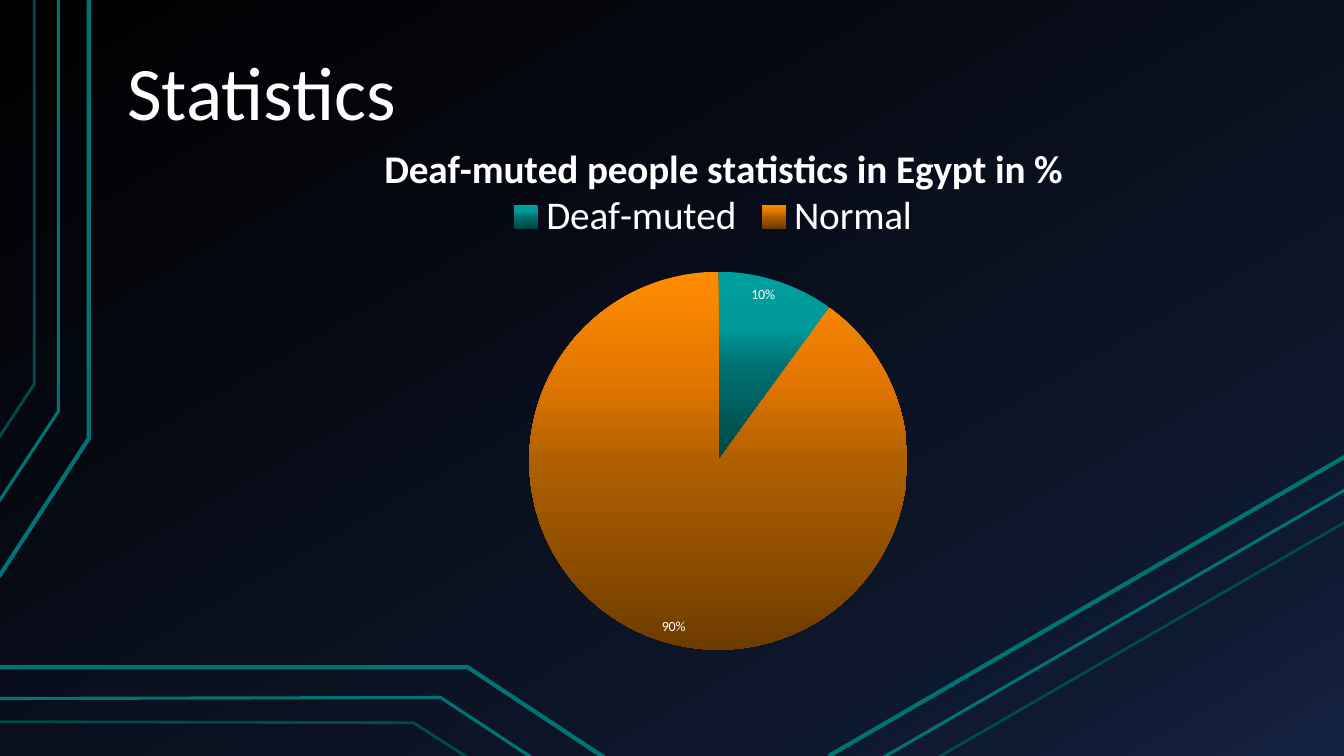
"""Build the statistics slide with a pie chart and circuit lines."""
import pptx
import pptx.chart.data
import pptx.dml.color
import pptx.enum.chart
import pptx.enum.shapes
import pptx.enum.text
import pptx.oxml
import pptx.oxml.ns
import pptx.util

RGB = pptx.dml.color.RGBColor
WHITE = RGB(0xFF, 0xFF, 0xFF)
TEAL = RGB(0x00, 0x73, 0x73)
DIM = RGB(0x00, 0x4B, 0x4B)
NIGHT = [(0, RGB(0, 0, 0)), (85, RGB(0x0F, 0x19, 0x31)), (100, RGB(0x14, 0x22, 0x42))]
SLICES = [
    [(0, RGB(0x00, 0x9E, 0x9E)), (30, RGB(0x00, 0x99, 0x99)),
     (50, RGB(0x00, 0x70, 0x70)), (100, RGB(0x00, 0x45, 0x45))],
    [(0, RGB(0xFF, 0x8C, 0x00)), (30, RGB(0xE0, 0x75, 0x00)),
     (50, RGB(0xB0, 0x60, 0x00)), (100, RGB(0x6E, 0x3C, 0x00))],
]
FONT = "Calibri"
UNIT = pptx.util.Inches(0.01)
qn = pptx.oxml.ns.qn
nsdecls = pptx.oxml.ns.nsdecls


def paint(fill, root, stops, angle):
    """Give the newest gradient under root its stops and clockwise angle."""
    fill.gradient()
    fill.gradient_angle = 360 - angle
    ramp = root.findall(".//" + qn("a:gsLst"))[-1]
    for old in list(ramp):
        ramp.remove(old)
    for share, color in stops:
        ramp.append(pptx.oxml.parse_xml(
            f'<a:gs {nsdecls("a")} pos="{share * 1000}"><a:srgbClr val="{color}"/></a:gs>'))


def place(node, slot, **shares):
    """Lay out a chart part by shares of the chart's size."""
    for old in node.findall(qn("c:layout")):
        node.remove(old)
    inner = '<c:layoutTarget val="inner"/>' if "w" in shares else ""
    modes = "".join(f'<c:{key}Mode val="edge"/>' for key in "xy")
    sizes = "".join(f'<c:{key} val="{val}"/>' for key, val in shares.items())
    node.insert(slot, pptx.oxml.parse_xml(
        f'<c:layout {nsdecls("c")}><c:manualLayout>{inner}{modes}{sizes}'
        '</c:manualLayout></c:layout>'))


deck = pptx.Presentation()
deck.slide_width = pptx.util.Inches(13.33)
deck.slide_height = pptx.util.Inches(7.5)
slide = deck.slides.add_slide(deck.slide_layouts[5])
shapes = slide.shapes
paint(slide.background.fill, slide.element, NIGHT, 60)

styles = [(TEAL, 3), (TEAL, 2.25), (DIM, 2)]
left = [
    [(-1, 572), (88, 435), (88, 0)],
    [(-2, 499), (58, 408), (58, 0)],
    [(-1, 434), (34, 381), (34, 0)],
]
right = [
    [(822, 750), (1334, 453)],
    [(875, 752), (1334, 486)],
    [(931, 751), (1334, 518)],
]
base = [
    [(600, 752), (464, 662), (0, 662)],
    [(528, 752), (437, 692), (0, 693)],
    [(463, 751), (410, 717), (-1, 716)],
]
for group in (left, right, base):
    for points, (color, weight) in zip(group, styles):
        if len(points) == 2:
            ends = [UNIT * val for point in points for val in point]
            track = shapes.add_connector(pptx.enum.shapes.MSO_CONNECTOR.STRAIGHT, *ends)
            track.element.spPr.append(pptx.oxml.parse_xml(f'<a:effectLst {nsdecls("a")}/>'))
        else:
            pen = shapes.build_freeform(*points[0], scale=UNIT)
            pen.add_line_segments(points[1:], close=False)
            track = pen.convert_to_shape()
            track.fill.background()
            track.shadow.inherit = False
        track.line.color.rgb = color
        track.line.width = pptx.util.Pt(weight)

data = pptx.chart.data.CategoryChartData()
data.categories = ["Deaf-muted", "Normal"]
data.add_series("Series 1", (10, 90))
chart = shapes.add_chart(
    pptx.enum.chart.XL_CHART_TYPE.PIE,
    200 * UNIT, 100 * UNIT, 1025 * UNIT, 558 * UNIT, data).chart
chart.font.name = FONT
chart.font.size = pptx.util.Pt(10)
chart.font.color.rgb = WHITE

head = chart.chart_title.text_frame
head.text = "Deaf-muted people statistics in Egypt in %"
run = head.paragraphs[0].runs[0]
run.font.name = FONT
run.font.size = pptx.util.Pt(28)
run.font.bold = True
run.font.color.rgb = WHITE

chart.has_legend = True
chart.legend.position = pptx.enum.chart.XL_LEGEND_POSITION.TOP
chart.legend.include_in_layout = False
chart.legend.font.name = FONT
chart.legend.font.size = pptx.util.Pt(28)
chart.legend.font.color.rgb = WHITE

plot = chart.plots[0]
plot.vary_by_categories = True
plot.has_data_labels = True
labels = plot.data_labels
labels.show_percentage = True
labels.show_value = False
labels.number_format = "0%"
labels.number_format_is_linked = False
labels.position = pptx.enum.chart.XL_LABEL_POSITION.INSIDE_END
labels.font.name = FONT
labels.font.size = pptx.util.Pt(10)
labels.font.color.rgb = WHITE
for index, stops in enumerate(SLICES):
    slice_ = plot.series[0].points[index].format
    paint(slice_.fill, chart.element, stops, 90)
    slice_.line.fill.background()

root = chart.element.find(qn("c:chart"))
place(root.find(qn("c:title")), 1, x=0.17, y=0.06)
place(root.find(qn("c:legend")), 1, x=0.29, y=0.15)
place(root.find(qn("c:plotArea")), 0, x=0.317, y=0.304, w=0.366, h=0.672)

title = shapes.title
title.left, title.top = 116 * UNIT, 50 * UNIT
title.width, title.height = 1133 * UNIT, 134 * UNIT
frame = title.text_frame
frame.text = "Statistics"
frame.vertical_anchor = pptx.enum.text.MSO_ANCHOR.TOP
line = frame.paragraphs[0]
line.alignment = pptx.enum.text.PP_ALIGN.LEFT
line.line_spacing = 0.9
line.runs[0].font.name = FONT
line.runs[0].font.size = pptx.util.Pt(54)
line.runs[0].font.color.rgb = WHITE

deck.save("out.pptx")
